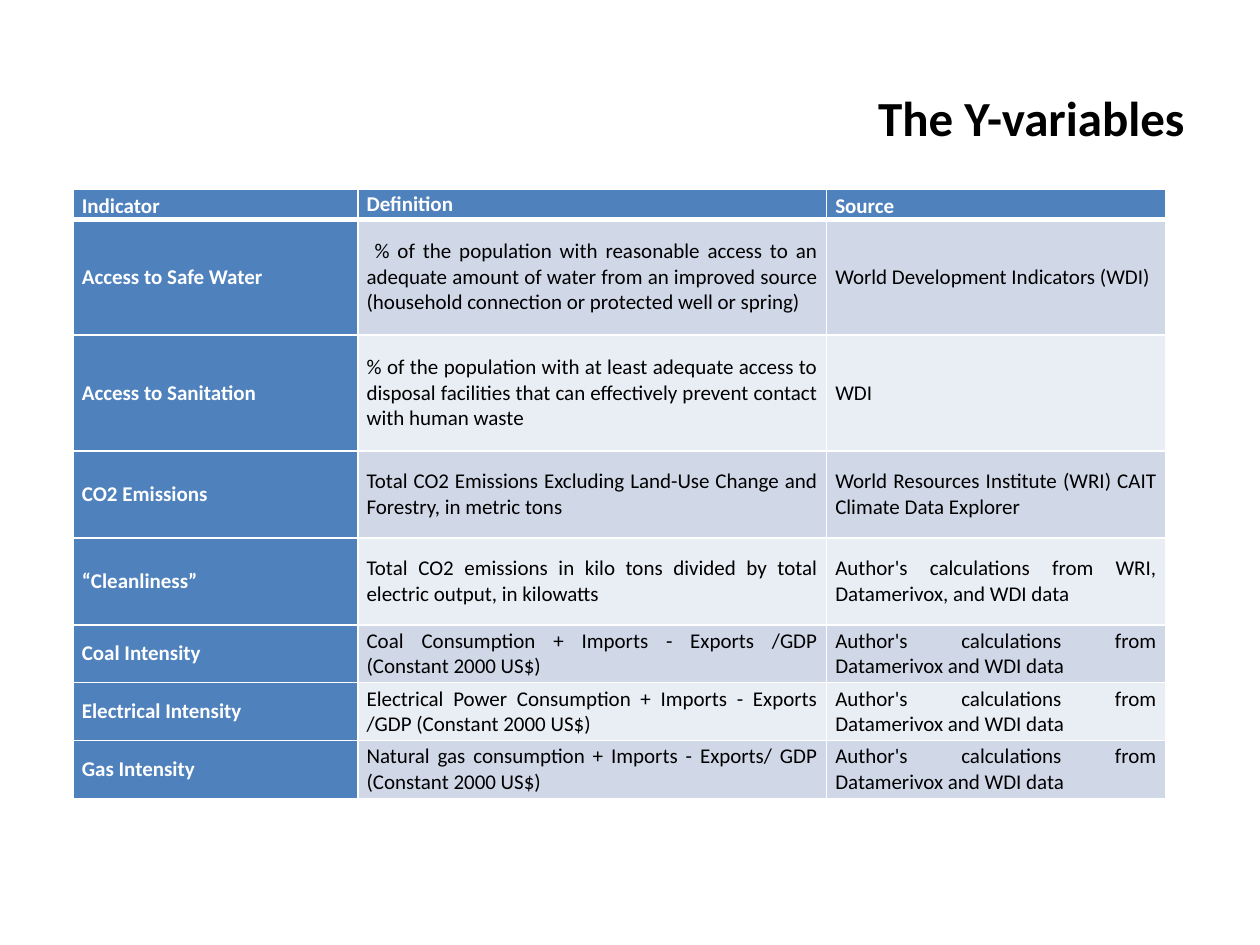
"""Build a slide with a table of the Y-variables, their definitions and sources."""
from dataclasses import dataclass

from lxml import etree
from pptx import Presentation
from pptx.dml.color import RGBColor as RGB
from pptx.enum.text import MSO_ANCHOR as ANCHOR, PP_ALIGN as ALIGN
from pptx.oxml.ns import qn
from pptx.util import Inches, Pt


@dataclass(frozen=True)
class Theme:
    font: str = "Calibri"
    title_size: int = 28
    cell_size: int = 12
    dark: str = "000000"
    light: str = "FFFFFF"
    accent: str = "4F81BD"
    bands: tuple = ("D0D8E8", "E9EDF4")


theme = Theme()


def add_text(tf, text, size, color, bold, align):
    p = tf.paragraphs[0]
    p.alignment = align
    r = p.add_run()
    r.text = text
    r.font.name = theme.font
    r.font.size = Pt(size)
    r.font.bold = bold
    r.font.color.rgb = RGB.from_string(color)


def add_border(cell, side, width):
    tc_pr = cell._tc.get_or_add_tcPr()
    ln = etree.SubElement(tc_pr, qn(f"a:ln{side}"), w=str(Pt(width)))
    fill = etree.SubElement(ln, qn("a:solidFill"))
    etree.SubElement(fill, qn("a:srgbClr"), val=theme.light)


rows = [
    ("Indicator", "Definition", "Source"),
    ("Access to Safe Water",
     " % of the population with reasonable access to an adequate amount of water "
     "from an improved source (household connection or protected well or spring)",
     "World Development Indicators (WDI)"),
    ("Access to Sanitation",
     "% of the population with at least adequate access to disposal facilities "
     "that can effectively prevent contact with human waste",
     "WDI"),
    ("CO2 Emissions",
     "Total CO2 Emissions Excluding Land-Use Change and Forestry, in metric tons",
     "World Resources Institute (WRI) CAIT Climate Data Explorer"),
    ("“Cleanliness”",
     "Total CO2 emissions in kilo tons divided by total electric output, in kilowatts",
     "Author's calculations from WRI, Datamerivox, and WDI data"),
    ("Coal Intensity",
     "Coal Consumption + Imports - Exports /GDP (Constant 2000 US$)",
     "Author's calculations from Datamerivox and WDI data"),
    ("Electrical Intensity",
     "Electrical Power Consumption + Imports - Exports /GDP (Constant 2000 US$)",
     "Author's calculations from Datamerivox and WDI data"),
    ("Gas Intensity",
     "Natural gas consumption + Imports - Exports/ GDP (Constant 2000 US$)",
     "Author's calculations from Datamerivox and WDI data"),
]
col_widths = [2.26, 3.72, 2.69]
row_heights = [0.24] + [0.92] * 2 + [0.69] * 2 + [0.46] * 3

prs = Presentation()
prs.slide_width, prs.slide_height = Inches(10), Inches(7.5)
s = prs.slides.add_slide(prs.slide_layouts[5])

title = s.shapes.title
title.left, title.top = Inches(0.5), Inches(0.3)
title.width, title.height = Inches(9), Inches(1.25)
title.text_frame.vertical_anchor = ANCHOR.MIDDLE
add_text(title.text_frame, "The Y-variables", theme.title_size, theme.dark, True, ALIGN.RIGHT)

table = s.shapes.add_table(
    len(rows), len(col_widths), Inches(0.58), Inches(1.5),
    Inches(sum(col_widths)), Inches(sum(row_heights))).table
for column, width in zip(table.columns, col_widths):
    column.width = Inches(width)
for row, height in zip(table.rows, row_heights):
    row.height = Inches(height)

for i, texts in enumerate(rows):
    for j, text in enumerate(texts):
        cell = table.cell(i, j)
        is_header = i == 0 or j == 0
        cell.margin_left = cell.margin_right = Inches(0.07)
        cell.margin_top = cell.margin_bottom = 0
        cell.vertical_anchor = ANCHOR.BOTTOM if i == 0 and j != 1 else ANCHOR.MIDDLE
        for side in "LRTB":
            under_header = (i, side) in ((0, "B"), (1, "T"))
            add_border(cell, side, 3 if under_header else 1)
        cell.fill.solid()
        cell.fill.fore_color.rgb = RGB.from_string(
            theme.accent if is_header else theme.bands[(i - 1) % 2])
        add_text(cell.text_frame, text, theme.cell_size,
                 theme.light if is_header else theme.dark, is_header, ALIGN.JUSTIFY)

prs.save("out.pptx")
